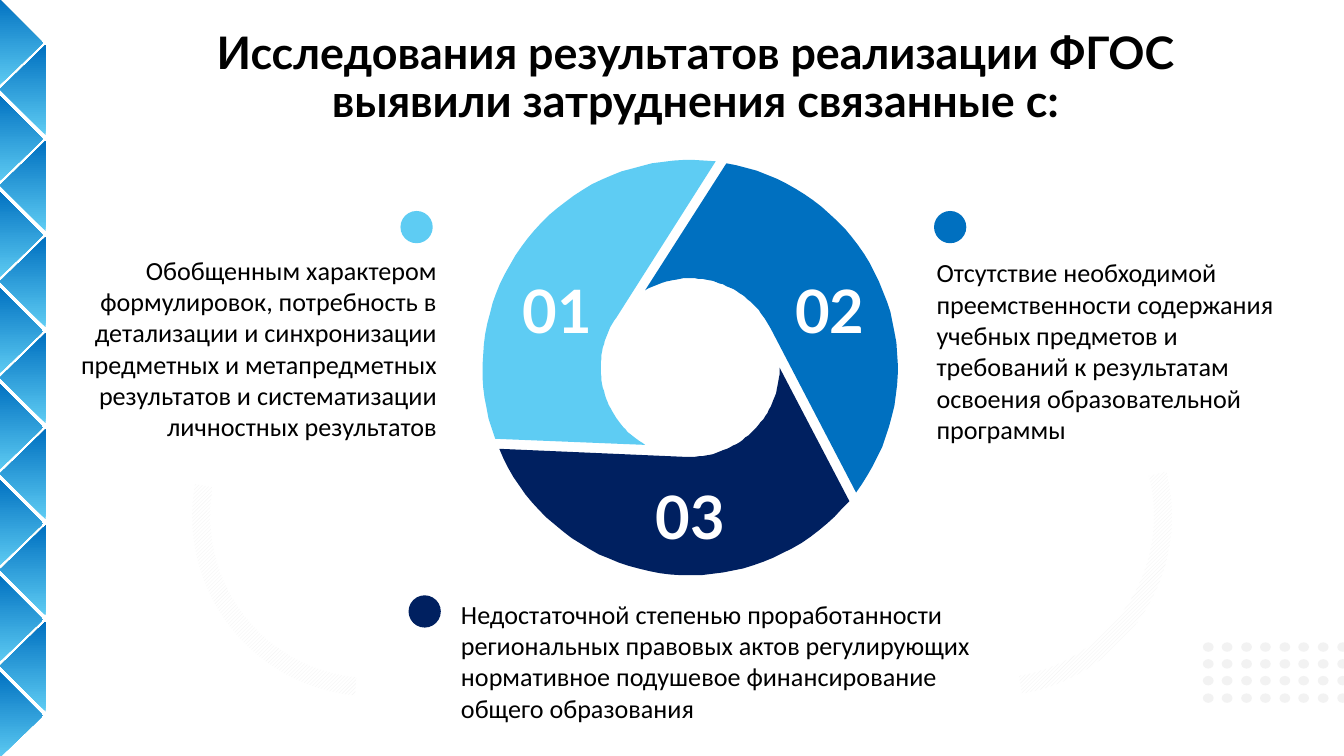
from dataclasses import dataclass
from math import cos, radians, sin

from pptx import Presentation
from pptx.dml.color import RGBColor
from pptx.enum.dml import MSO_PATTERN as Pat
from pptx.enum.shapes import MSO_SHAPE as Kind
from pptx.enum.text import MSO_ANCHOR as Anchor, MSO_AUTO_SIZE as Fit, PP_ALIGN as Align
from pptx.oxml.ns import qn
from pptx.util import Emu, Pt

PX = 4572  # 200 px to the inch
SKY, BLUE, NAVY = "5ECCF3", "0070C0", "002060"
BLACK, WHITE, PALE = "000000", "FFFFFF", "F2F2F2"


@dataclass
class Box:
    x: int
    y: int
    w: int
    h: int

    def emu(self) -> list[Emu]:
        return [Emu(n * PX) for n in (self.x, self.y, self.w, self.h)]


@dataclass
class Part:
    num: str
    hue: str
    turn: int  # start angle of the outer edge, clockwise from the right
    label: Box
    dot: Box


@dataclass
class Note:
    text: str
    box: Box
    align: Align


@dataclass
class Arc:
    x: int
    spin: float
    flip: bool


PARTS = [
    Part("01", SKY, 160, Box(756, 398, 146, 128), Box(596, 314, 48, 48)),
    Part("02", BLUE, 280, Box(1162, 398, 146, 128), Box(1390, 314, 48, 48)),
    Part("03", NAVY, 40, Box(954, 704, 146, 128), Box(608, 886, 48, 48)),
]
NOTES = [
    Note("Обобщенным характером формулировок, потребность в детализации и "
         "синхронизации предметных и метапредметных результатов и "
         "систематизации личностных результатов",
         Box(92, 368, 578, 302), Align.RIGHT),
    Note("Отсутствие необходимой преемственности содержания учебных предметов "
         "и требований к результатам освоения образовательной программы",
         Box(1374, 372, 566, 302), Align.LEFT),
]
LAST = Note("Недостаточной степенью проработанности региональных правовых актов "
            "регулирующих нормативное подушевое финансирование общего образования",
            Box(672, 882, 866, 224), Align.LEFT)
ARCS = [Arc(286, 191.6, True), Arc(1208, 164.3, False)]


def rgb(code: str) -> RGBColor:
    return RGBColor.from_string(code)


def style(para, size: int, face: str, hue: str, bold: bool, align: Align) -> None:
    para.alignment = align
    font = para.font
    font.size, font.name, font.bold = Pt(size), face, bold
    font.color.rgb = rgb(hue)


def plain(shape) -> None:
    shape.shadow.inherit = False
    shape.line.fill.background()


def paint(shape, hue: str) -> None:
    plain(shape)
    shape.fill.solid()
    shape.fill.fore_color.rgb = rgb(hue)


def outline(shapes, points: list[tuple[int, int]]):
    pen = shapes.build_freeform(*points[0], scale=PX)
    pen.add_line_segments(points[1:], close=True)
    return pen.convert_to_shape()


def oval(shapes, box: Box, hue: str) -> None:
    paint(shapes.add_shape(Kind.OVAL, *box.emu()), hue)


def fade(shapes, points: list[tuple[int, int]]) -> None:
    shape = outline(shapes, points)
    plain(shape)
    shape.fill.gradient()
    shape.fill.gradient_angle = 90
    for stop, hue in zip(shape.fill.gradient_stops, (SKY, BLUE)):
        stop.color.rgb = rgb(hue)


def curve(rad: int, start: int, end: int) -> list[tuple[int, int]]:
    """Points on a circle about the ring's centre."""
    steps = 40
    turns = [radians(start + (end - start) * i / steps) for i in range(steps + 1)]
    return [(round(1027 + rad * cos(t)), round(547 + rad * sin(t))) for t in turns]


def blade(shapes, part: Part) -> None:
    turn = part.turn
    edge = curve(309, turn, turn + 117) + curve(133, turn + 54, turn - 40)
    paint(outline(shapes, edge), part.hue)


def label(shapes, part: Part) -> None:
    frame = shapes.add_textbox(*part.label.emu()).text_frame
    frame.word_wrap = False
    frame.text = part.num
    style(frame.paragraphs[0], 32, "Lato", WHITE, True, Align.CENTER)


def write(shape, note: Note) -> None:
    frame = shape.text_frame
    frame.word_wrap = True
    frame.text = note.text
    para = frame.paragraphs[0]
    style(para, 14, "Calibri", BLACK, False, note.align)
    para.space_before = Pt(18)


def place(shape, box: Box) -> None:
    """Move a placeholder and tighten its margins."""
    shape.left, shape.top, shape.width, shape.height = box.emu()
    frame = shape.text_frame
    frame.auto_size = Fit.NONE
    frame.margin_left = frame.margin_right = Emu(14 * PX)
    frame.margin_top = frame.margin_bottom = Emu(8 * PX)


def sweep(shapes, arc: Arc) -> None:
    shape = shapes.add_shape(Kind.BLOCK_ARC, *Box(arc.x, 500, 536, 536).emu())
    plain(shape)
    for i, val in enumerate((108.82, 165.64, 0.05)):
        shape.adjustments[i] = val
    shape.rotation = arc.spin
    if arc.flip:
        shape._element.spPr.find(qn("a:xfrm")).set("flipH", "1")
    fill = shape.fill
    fill.patterned()
    fill.pattern = Pat.DARK_UPWARD_DIAGONAL
    fill.fore_color.rgb, fill.back_color.rgb = rgb(PALE), rgb(WHITE)


def main() -> None:
    deck = Presentation()
    deck.slide_width, deck.slide_height = Emu(2000 * PX), Emu(1125 * PX)
    slide = deck.slides.add_slide(deck.slide_layouts[1])
    shapes = slide.shapes

    # Side band of triangles
    for i in range(8):
        mid = 64 + 143 * i
        fade(shapes, [(64, mid), (-4, mid - 68), (-4, mid + 66)])
        if i < 7:
            mid += 69
            fade(shapes, [(68, mid - 66), (0, mid), (68, mid + 68)])

    # Title
    title = shapes.title
    place(title, Box(70, 36, 1930, 164))
    frame = title.text_frame
    frame.vertical_anchor = Anchor.MIDDLE
    frame.text = "Исследования результатов реализации ФГОС\vвыявили затруднения связанные с:"
    head = frame.paragraphs[0]
    style(head, 24, "Lato", BLACK, True, Align.CENTER)
    head.line_spacing = 0.9

    # Body text, without a bullet
    body = slide.placeholders[1]
    place(body, LAST.box)
    write(body, LAST)
    props = body.text_frame.paragraphs[0]._p.get_or_add_pPr()
    props.set("marL", "0")
    props.set("indent", "0")
    props.append(props.makeelement(qn("a:buNone"), {}))

    # Ring, notes, numbers and markers
    for part in PARTS:
        blade(shapes, part)
    for note in NOTES:
        write(shapes.add_textbox(*note.box.emu()), note)
    for part in PARTS:
        label(shapes, part)
        oval(shapes, part.dot, part.hue)

    # Dot grid and pale arcs
    for row in range(4):
        for col in range(8):
            oval(shapes, Box(1790 + col * 200 // 7, 956 + row * 76 // 3, 16, 14), PALE)
    for arc in ARCS:
        sweep(shapes, arc)

    deck.save("out.pptx")


if __name__ == "__main__":
    main()
